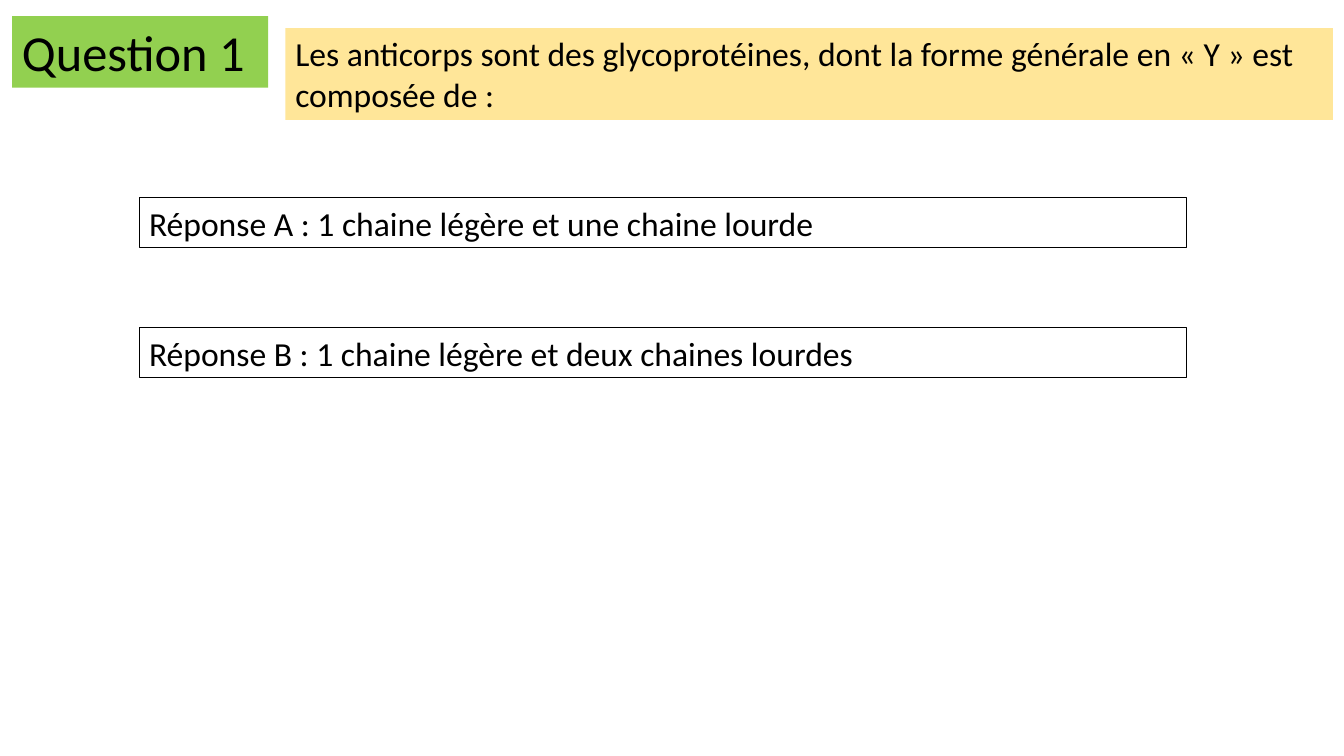
from pptx import Presentation
from pptx import util as u
from pptx.dml.color import RGBColor
from pptx.enum import text

GREEN = RGBColor(0x92, 0xD0, 0x50)
CREAM = RGBColor(0xFF, 0xE6, 0x99)
BLACK = RGBColor(0x00, 0x00, 0x00)
FONT = "Calibri"
CELL = u.Inches(0.1)  # side of one grid column or row
BAND_WIDTH = 103.9


def add_band(slide, box, wording, size, fill=None, line=None):
    """Add a text box; box is left, top, width, height in grid cells."""
    band = slide.shapes.add_textbox(*(round(cells * CELL) for cells in box))
    if fill is not None:
        band.fill.solid()
        band.fill.fore_color.rgb = fill
    if line is not None:
        band.line.color.rgb = line
        band.line.width = u.Pt(0.75)
    frame = band.text_frame
    frame.word_wrap = True
    frame.auto_size = text.MSO_AUTO_SIZE.SHAPE_TO_FIT_TEXT
    run = frame.paragraphs[0].add_run()
    run.text = wording
    run.font.name = FONT
    run.font.size = u.Pt(size)
    run.font.color.rgb = BLACK


def add_heading(slide, box, title, question):
    left, top, width, height = box
    add_band(slide, (left, top, 25.4, 7.1), title, 36, fill=GREEN)
    add_band(slide, (left + width - BAND_WIDTH, top + height - 9.1, BAND_WIDTH, 9.1),
             question, 24, fill=CREAM)


def add_answers(slide, box, answers):
    """Stack the outlined answers at equal steps, from the top of the box to its foot."""
    left, top, width, height = box
    row_height = 5
    step = (height - row_height) / (len(answers) - 1)
    for index, (letter, answer) in enumerate(answers.items()):
        add_band(slide, (left, top + index * step, width, row_height),
                 f"Réponse {letter} : {answer}", 24, line=BLACK)


def main():
    presentation = Presentation()
    presentation.slide_width = u.Inches(13.33)
    presentation.slide_height = u.Inches(7.5)
    slide = presentation.slides.add_slide(presentation.slide_layouts[6])
    add_heading(slide, (1.2, 1.6, 131, 10.3), "Question 1",
                "Les anticorps sont des glycoprotéines, dont la forme générale "
                "en « Y » est composée de :")
    add_answers(slide, (13.8, 19.6, BAND_WIDTH, 17.9), {
        "A": "1 chaine légère et une chaine lourde",
        "B": "1 chaine légère et deux chaines lourdes",
    })
    presentation.save("out.pptx")


if __name__ == "__main__":
    main()
